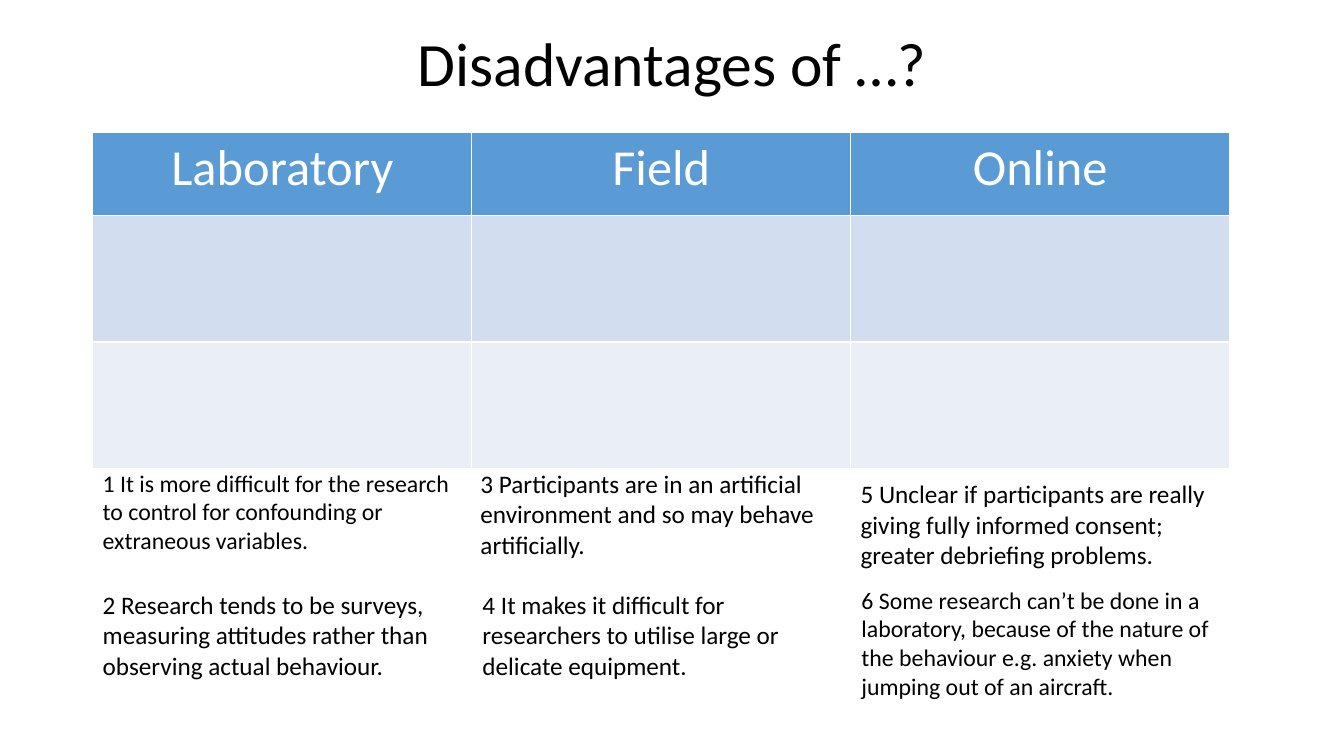
from dataclasses import dataclass

from pptx import Presentation
from pptx.dml.color import RGBColor
from pptx.enum.text import MSO_ANCHOR, MSO_AUTO_SIZE, PP_ALIGN
from pptx.util import Cm, Pt

# Content
TITLE = "Disadvantages of …?"
SETTINGS = ["Laboratory", "Field", "Online"]

# Statements to sort: text, left (cm), top (cm), height (cm), type size (pt)
STATEMENTS = [
    ("1 It is more difficult for the research to control for confounding or "
     "extraneous variables.", 2.34, 11.68, 2.44, 17),
    ("2 Research tends to be surveys, measuring attitudes rather than "
     "observing actual behaviour.", 2.34, 14.73, 2.57, 18),
    ("3 Participants are in an artificial environment and so may behave "
     "artificially.", 11.86, 11.68, 2.57, 18),
    ("4 It makes it difficult for researchers to utilise large or delicate "
     "equipment.", 11.91, 14.73, 2.57, 18),
    ("5 Unclear if participants are really giving fully informed consent; "
     "greater debriefing problems.", 21.44, 11.94, 2.57, 18),
    ("6 Some research can’t be done in a laboratory, because of the nature of "
     "the behaviour e.g. anxiety when jumping out of an aircraft.",
     21.46, 14.63, 3.18, 17),
]


@dataclass(frozen=True)
class Theme:
    font: str = "Calibri"
    title_size: int = 44
    header_size: int = 36
    text: RGBColor = RGBColor(0x00, 0x00, 0x00)
    header_text: RGBColor = RGBColor(0xFF, 0xFF, 0xFF)
    row_fills: tuple = (RGBColor(0x5B, 0x9B, 0xD5),
                        RGBColor(0xD2, 0xDE, 0xEF),
                        RGBColor(0xEA, 0xEF, 0xF7))


THEME = Theme()

# Layout in cm
LEFT, TABLE_TOP = 2.34, 3.33
COL_WIDTH = 9.55
ROW_HEIGHTS = [2.11, 3.18, 3.18]


def add_run(p, text, size, color):
    r = p.add_run()
    r.text = text
    r.font.name = THEME.font
    r.font.size = Pt(size)
    r.font.bold = False
    r.font.color.rgb = color


def add_title(slide):
    sp = slide.shapes.title
    sp.left, sp.top, sp.width, sp.height = Cm(LEFT), Cm(0), Cm(29.21), Cm(3.33)
    tf = sp.text_frame
    tf.auto_size = MSO_AUTO_SIZE.NONE
    tf.vertical_anchor = MSO_ANCHOR.MIDDLE
    p = tf.paragraphs[0]
    p.alignment = PP_ALIGN.CENTER
    p.line_spacing = 0.9
    add_run(p, TITLE, THEME.title_size, THEME.text)


def add_settings_table(slide):
    n_rows, n_cols = len(ROW_HEIGHTS), len(SETTINGS)
    table = slide.shapes.add_table(
        n_rows, n_cols, Cm(LEFT), Cm(TABLE_TOP),
        Cm(COL_WIDTH * n_cols), Cm(sum(ROW_HEIGHTS))).table
    for column in table.columns:
        column.width = Cm(COL_WIDTH)
    for row, height, color in zip(table.rows, ROW_HEIGHTS, THEME.row_fills):
        row.height = Cm(height)
        for cell in row.cells:
            cell.fill.solid()
            cell.fill.fore_color.rgb = color
    for cell, setting in zip(table.rows[0].cells, SETTINGS):
        p = cell.text_frame.paragraphs[0]
        p.alignment = PP_ALIGN.CENTER
        add_run(p, setting, THEME.header_size, THEME.header_text)


def add_statement(slide, text, left, top, height, size):
    sp = slide.shapes.add_textbox(Cm(left), Cm(top), Cm(COL_WIDTH), Cm(height))
    tf = sp.text_frame
    tf.word_wrap = True
    tf.auto_size = MSO_AUTO_SIZE.SHAPE_TO_FIT_TEXT
    add_run(tf.paragraphs[0], text, size, THEME.text)


def main():
    prs = Presentation()
    prs.slide_width, prs.slide_height = Cm(33.87), Cm(19.05)
    slide = prs.slides.add_slide(prs.slide_layouts.get_by_name("Title Only"))
    add_title(slide)
    add_settings_table(slide)
    for statement in STATEMENTS:
        add_statement(slide, *statement)
    prs.save("out.pptx")


if __name__ == "__main__":
    main()
